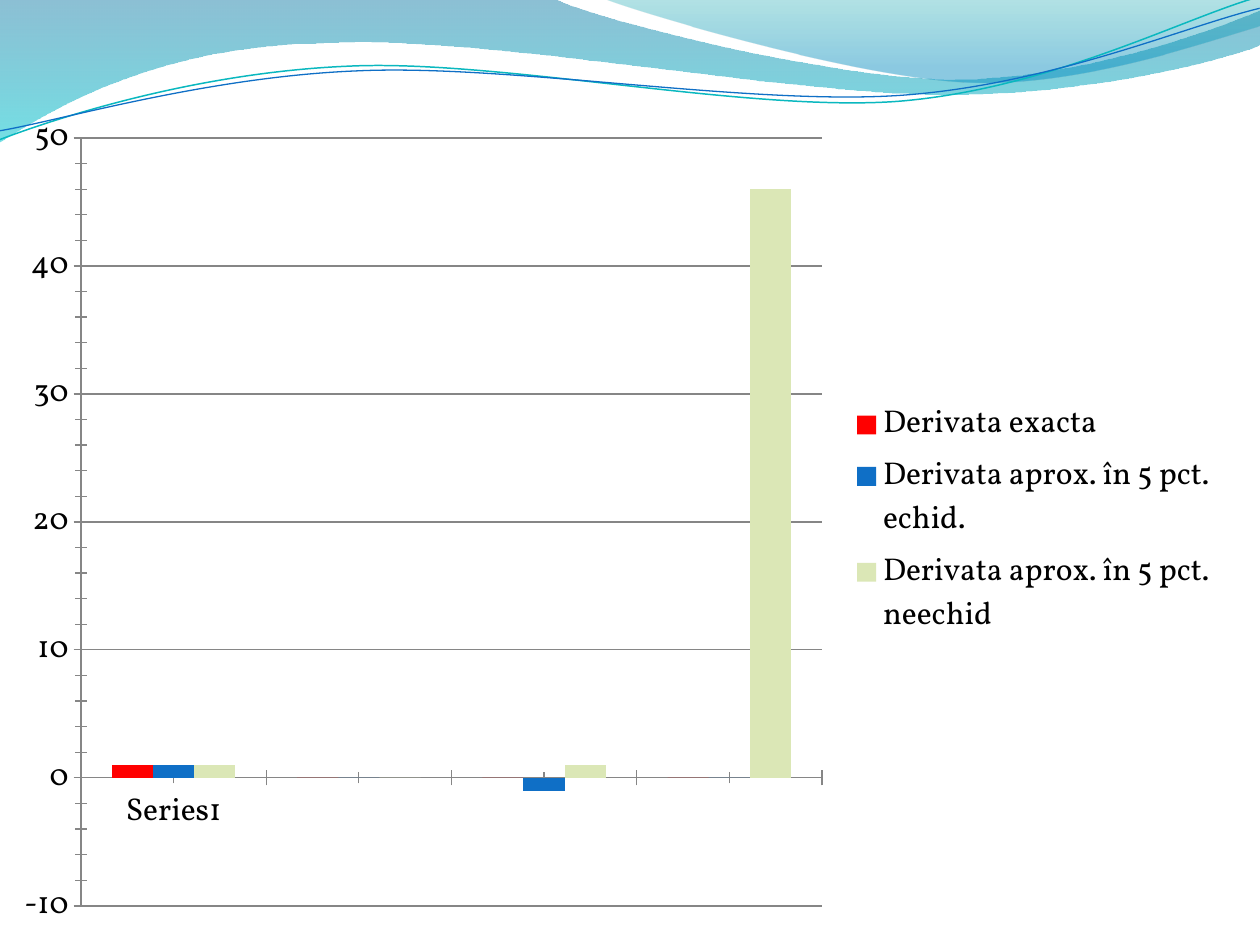
import pptx
import pptx.chart.data
import pptx.dml.color
import pptx.enum.chart
import pptx.oxml
import pptx.oxml.ns
import pptx.util

PX = 914400 / 126
FONT = "Vollkorn"
AXIS_GREY = "868686"
CHART_LEFT, CHART_TOP, CHART_WIDTH, CHART_HEIGHT = 0, 98, 1231, 847
LINE_TILT = 357.3

# Each outline is a start point followed by segments:
# one point for a straight line, three points for a cubic curve.
LEFT_WAVE = [
    (0, 0),
    [(554, -1)],
    [(600, 21), (837, 79), (955, 79)],
    [(1075, 79), (1207, 33), (1260, 11)],
    [(1261, 45)],
    [(1239, 55), (1096, 96), (940, 94)],
    [(783, 94), (481, 35), (324, 43)],
    [(163, 45), (58, 105), (-1, 142)],
    [(0, 0)],
]
RIGHT_WAVE = [
    (604, -1),
    [(641, 14), (859, 78), (969, 82)],
    [(1079, 87), (1211, 40), (1260, 26)],
    [(1260, 0)],
    [(604, -1)],
]
TEAL_LINE = [
    (-3, 110),
    [(58, 90), (199, 52), (350, 53)],
    [(499, 53), (745, 118), (896, 114)],
    [(1048, 109), (1184, 45), (1260, 27)],
]
BLUE_LINE = [
    (-2, 101),
    [(57, 94), (207, 57), (357, 58)],
    [(509, 58), (750, 112), (902, 108)],
    [(1052, 104), (1188, 52), (1262, 38)],
]

CATEGORIES = ["Series1", "", "", ""]
SERIES = [
    ("Derivata exacta", [1, 0, 0, 0], "FF0000"),
    ("Derivata aprox. în 5 pct. echid.", [1, 0, -1, 0], "0F6FC6"),
    ("Derivata aprox. în 5 pct. neechid", [1, 0, 1, 46], "DBE7B6"),
]


def px(length):
    return pptx.util.Emu(round(length * PX))


def rgb(color):
    return pptx.dml.color.RGBColor.from_string(color)


def add_outline(page, outline, close):
    """Build the outline through its end points, then bend its curves."""
    start, *segments = outline
    builder = page.shapes.build_freeform(*start, scale=PX)
    builder.add_line_segments([segment[-1] for segment in segments], close=close)
    shape = builder.convert_to_shape()
    shape.shadow.inherit = False

    left = min(x for x, y in [start] + [segment[-1] for segment in segments])
    top = min(y for x, y in [start] + [segment[-1] for segment in segments])
    straights = list(shape._element.spPr.iter(pptx.oxml.ns.qn("a:lnTo")))
    for straight, segment in zip(straights, segments):
        if len(segment) == 3:
            points = "".join(
                f'<a:pt x="{x - left}" y="{y - top}"/>' for x, y in segment)
            curve = pptx.oxml.parse_xml(
                f'<a:cubicBezTo {pptx.oxml.ns.nsdecls("a")}>{points}</a:cubicBezTo>')
            straight.getparent().replace(straight, curve)
    return shape


def add_wave(page, outline, stops):
    """Add a closed shape with a see-through gradient running downwards."""
    shape = add_outline(page, outline, True)
    shape.line.fill.background()
    shape.fill.gradient()
    shape.fill.gradient_angle = 270
    for stop, (position, color, opacity) in zip(shape.fill.gradient_stops, stops):
        stop.position = position
        stop.color.rgb = rgb(color)
    colors = shape._element.spPr.iter(pptx.oxml.ns.qn("a:srgbClr"))
    for element, (position, color, opacity) in zip(colors, stops):
        element.append(pptx.oxml.parse_xml(
            f'<a:alpha {pptx.oxml.ns.nsdecls("a")} val="{opacity * 1000}"/>'))


def add_curve(page, outline, color, width):
    shape = add_outline(page, outline, False)
    shape.rotation = LINE_TILT
    shape.fill.background()
    shape.line.color.rgb = rgb(color)
    shape.line.width = pptx.util.Pt(width)


def set_layout(element, left, top, width, height, inner=False):
    """Place a chart part at a position on the page."""
    for old in element.findall(pptx.oxml.ns.qn("c:layout")):
        element.remove(old)
    target = '<c:layoutTarget val="inner"/>' if inner else ""
    layout = pptx.oxml.parse_xml(
        f'<c:layout {pptx.oxml.ns.nsdecls("c")}><c:manualLayout>{target}'
        '<c:xMode val="edge"/><c:yMode val="edge"/>'
        f'<c:x val="{(left - CHART_LEFT) / CHART_WIDTH}"/>'
        f'<c:y val="{(top - CHART_TOP) / CHART_HEIGHT}"/>'
        f'<c:w val="{width / CHART_WIDTH}"/>'
        f'<c:h val="{height / CHART_HEIGHT}"/>'
        '</c:manualLayout></c:layout>')
    element.insert(0 if inner else 1, layout)


def style_axis(axis):
    axis.major_tick_mark = pptx.enum.chart.XL_TICK_MARK.CROSS
    axis.minor_tick_mark = pptx.enum.chart.XL_TICK_MARK.CROSS
    axis.format.line.color.rgb = rgb(AXIS_GREY)


def add_derivative_chart(page):
    data = pptx.chart.data.CategoryChartData()
    data.categories = CATEGORIES
    for name, values, color in SERIES:
        data.add_series(name, values)
    chart = page.shapes.add_chart(
        pptx.enum.chart.XL_CHART_TYPE.COLUMN_CLUSTERED,
        px(CHART_LEFT), px(CHART_TOP), px(CHART_WIDTH), px(CHART_HEIGHT), data).chart
    chart.has_title = False
    chart.font.name = FONT
    chart.font.size = pptx.util.Pt(18)
    chart.font.color.rgb = rgb("000000")

    plot = chart.plots[0]
    plot.vary_by_categories = False
    plot.gap_width = 150
    plot.overlap = 0
    for series, (name, values, color) in zip(plot.series, SERIES):
        series.invert_if_negative = False
        series.format.fill.solid()
        series.format.fill.fore_color.rgb = rgb(color)

    style_axis(chart.category_axis)
    value_axis = chart.value_axis
    style_axis(value_axis)
    value_axis.minimum_scale = -10
    value_axis.maximum_scale = 50
    value_axis.major_unit = 10
    value_axis.has_major_gridlines = True
    value_axis.major_gridlines.format.line.color.rgb = rgb(AXIS_GREY)

    chart.has_legend = True
    chart.legend.position = pptx.enum.chart.XL_LEGEND_POSITION.RIGHT
    chart.legend.include_in_layout = False
    set_layout(chart._chartSpace.chart.plotArea, 81, 138, 741, 768, inner=True)
    set_layout(chart.legend._element, 849, 396, 369, 250)


def main():
    deck = pptx.Presentation()
    deck.slide_width = px(1260)
    deck.slide_height = px(945)
    page = deck.slides.add_slide(deck.slide_layouts[6])
    add_wave(page, LEFT_WAVE, [(0, "0074A1", 45), (1, "00C6CF", 55)])
    add_wave(page, RIGHT_WAVE, [(0, "00A1A9", 30), (0.8, "008BBF", 45)])
    add_curve(page, TEAL_LINE, "0AB8BF", 0.85)
    add_curve(page, BLUE_LINE, "0F6FC6", 0.75)
    add_derivative_chart(page)
    deck.save("out.pptx")


if __name__ == "__main__":
    main()
